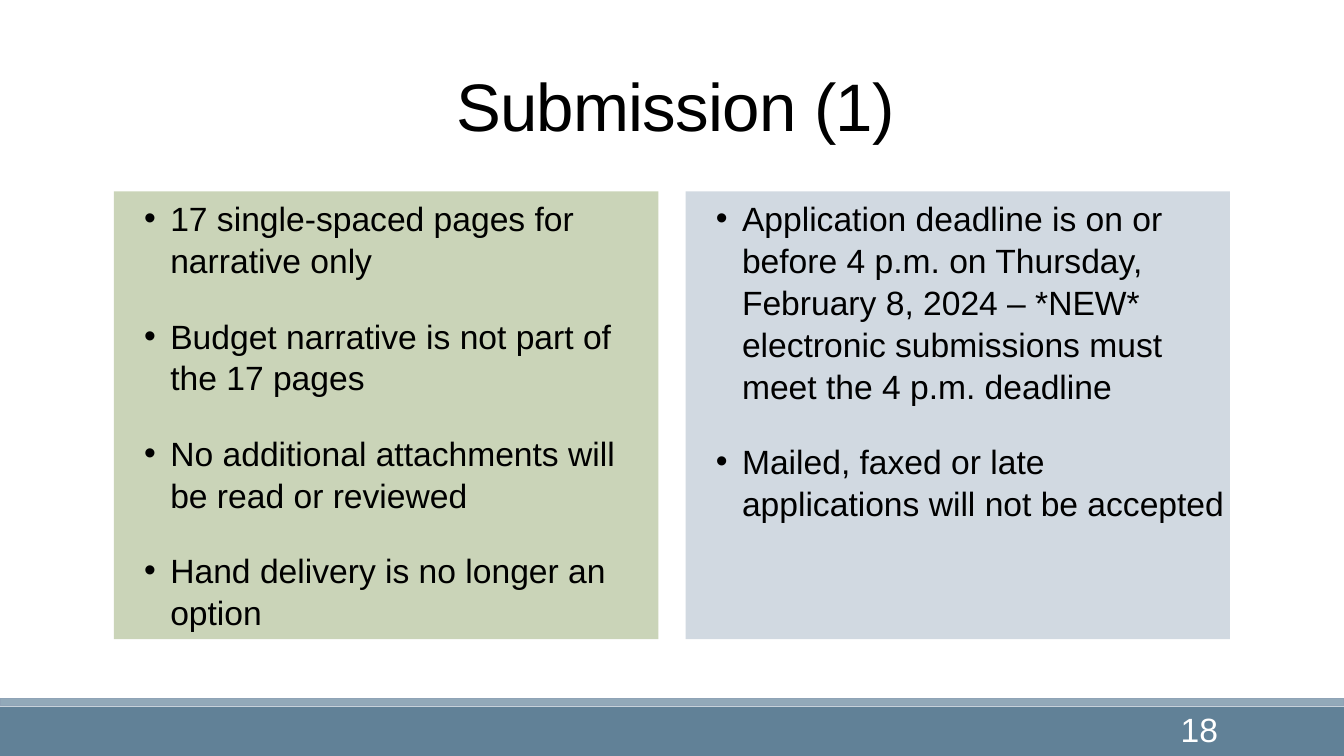
from dataclasses import dataclass

from lxml import etree
from pptx import Presentation
from pptx.dml.color import RGBColor
from pptx.enum.shapes import MSO_SHAPE
from pptx.enum.text import MSO_ANCHOR, PP_ALIGN
from pptx.oxml.ns import qn
from pptx.shapes.autoshape import Shape
from pptx.slide import Slide
from pptx.util import Inches, Pt

RECTANGLE = MSO_SHAPE.RECTANGLE
TOP, MIDDLE = MSO_ANCHOR.TOP, MSO_ANCHOR.MIDDLE
LEFT, CENTER, RIGHT = PP_ALIGN.LEFT, PP_ALIGN.CENTER, PP_ALIGN.RIGHT


@dataclass(frozen=True)
class Theme:
    font: str = "Arial"
    ink: str = "000000"
    footer: str = "618197"
    stripe: str = "92A9B9"
    stripe_edge: str = "8FA3B6"
    green: str = "CAD4B8"
    blue: str = "D1D9E1"
    page_ink: str = "FFFFFF"
    title_size: float = 48
    body_size: float = 24
    paragraph_gap: float = 12
    body_spacing: float = 1.04
    title_spacing: float = 0.85


@dataclass(frozen=True)
class Box:
    left: float
    top: float
    width: float
    height: float

    def lengths(self) -> tuple[int, int, int, int]:
        return (Inches(self.left), Inches(self.top),
                Inches(self.width), Inches(self.height))


@dataclass(frozen=True)
class Panel:
    fill: str
    points: tuple[str, ...]


THEME = Theme()
SLIDE_WIDTH, SLIDE_HEIGHT = 13.33, 7.5
PANEL_LEFT, PANEL_PITCH = 1.13, 5.67
PANELS = (
    Panel(THEME.green, (
        "17 single-spaced pages for narrative only",
        "Budget narrative is not part of the 17 pages",
        "No additional attachments will be read or reviewed",
        "Hand delivery is no longer an option",
    )),
    Panel(THEME.blue, (
        "Application deadline is on or before 4 p.m. on Thursday, "
        "February 8, 2024 – *NEW* electronic submissions must meet "
        "the 4 p.m. deadline",
        "Mailed, faxed or late applications will not be accepted",
    )),
)


def add_block(slide: Slide, box: Box, fill: str, edge: str = "") -> Shape:
    block = slide.shapes.add_shape(RECTANGLE, *box.lengths())
    block.shadow.inherit = False
    block.fill.solid()
    block.fill.fore_color.rgb = RGBColor.from_string(fill)
    if edge:
        block.line.color.rgb = RGBColor.from_string(edge)
        block.line.width = Pt(1.25)
    else:
        block.line.fill.background()
    return block


def add_run(paragraph, text: str, size: float, color: str):
    run = paragraph.add_run()
    run.text = text
    run.font.name = THEME.font
    run.font.size = Pt(size)
    run.font.color.rgb = RGBColor.from_string(color)
    return run


def add_label(slide: Slide, box: Box, text: str, size: float, color: str,
              alignment: PP_ALIGN, spacing: float = 1.0):
    frame = slide.shapes.add_textbox(*box.lengths()).text_frame
    frame.word_wrap = True
    frame.vertical_anchor = MIDDLE
    paragraph = frame.paragraphs[0]
    paragraph.alignment = alignment
    paragraph.line_spacing = spacing
    return add_run(paragraph, text, size, color)


def add_bullet(paragraph) -> None:
    properties = paragraph._p.get_or_add_pPr()
    properties.set("marL", str(Inches(0.51)))
    properties.set("indent", str(Inches(-0.26)))
    etree.SubElement(properties, qn("a:buFont")).set("typeface", THEME.font)
    etree.SubElement(properties, qn("a:buChar")).set("char", "•")


def add_panel(slide: Slide, box: Box, panel: Panel) -> None:
    frame = add_block(slide, box, panel.fill).text_frame
    frame.word_wrap = True
    frame.vertical_anchor = TOP
    frame.margin_left = frame.margin_right = Inches(0.05)
    frame.margin_top = frame.margin_bottom = Inches(0.05)
    for index, point in enumerate(panel.points):
        paragraph = frame.add_paragraph() if index else frame.paragraphs[0]
        add_bullet(paragraph)
        paragraph.alignment = LEFT
        paragraph.line_spacing = THEME.body_spacing
        paragraph.space_before = Pt(THEME.paragraph_gap if index else 0)
        paragraph.space_after = Pt(THEME.paragraph_gap)
        add_run(paragraph, point, THEME.body_size, THEME.ink)


def main() -> None:
    presentation = Presentation()
    presentation.slide_width = Inches(SLIDE_WIDTH)
    presentation.slide_height = Inches(SLIDE_HEIGHT)
    slide = presentation.slides.add_slide(presentation.slide_layouts[6])

    add_block(slide, Box(0, 7.01, SLIDE_WIDTH, 0.49), THEME.footer)
    add_block(slide, Box(0, 6.93, SLIDE_WIDTH, 0.07), THEME.stripe, THEME.stripe_edge)

    title = add_label(slide, Box(1.2, 0.31, 11, 1.59), "Submission (1)",
                      THEME.title_size, THEME.ink, CENTER, THEME.title_spacing)
    title.font._element.set("spc", "-50")

    for column, panel in enumerate(PANELS):
        add_panel(slide, Box(PANEL_LEFT + column * PANEL_PITCH, 1.9, 5.4, 4.44), panel)

    add_label(slide, Box(10.75, 7.03, 1.43, 0.4), "18",
              THEME.body_size, THEME.page_ink, RIGHT)
    presentation.save("out.pptx")


if __name__ == "__main__":
    main()
